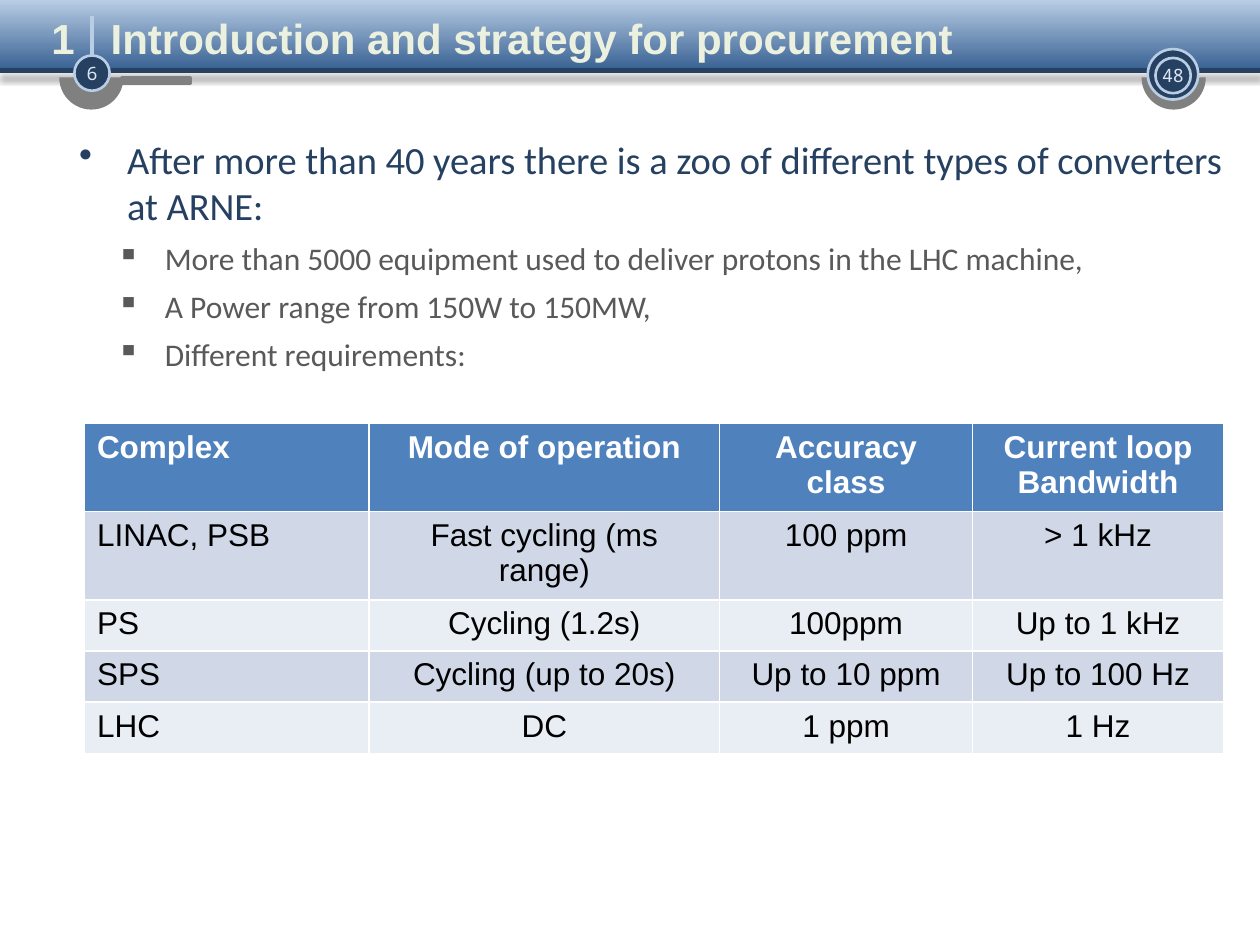
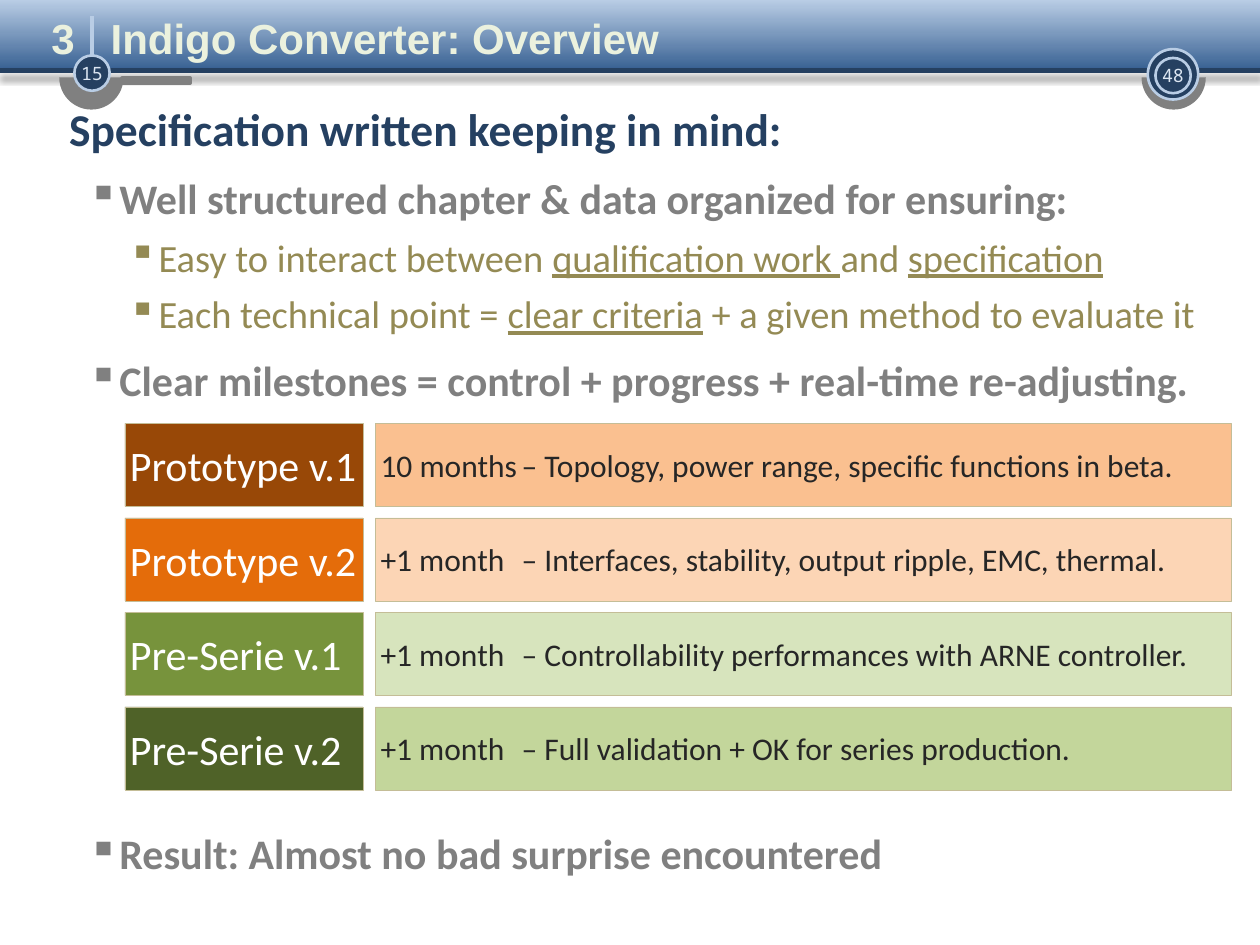
from lxml.etree import SubElement
from pptx import Presentation
from pptx.dml.color import RGBColor
from pptx.enum.shapes import MSO_CONNECTOR, MSO_SHAPE
from pptx.enum.text import MSO_ANCHOR, PP_ALIGN
from pptx.oxml.ns import qn
from pptx.util import Inches, Pt

COLOURS = {
    "navy": "254061", "band": "376092", "sky": "B9CDE5", "ice": "DCE6F2",
    "cream": "EBF1DE", "grey": "808080", "dark grey": "595959",
    "olive": "948A54", "ink": "262626", "white": "FFFFFF", "black": "000000",
    "header": "4F81BD", "odd row": "D0D8E8", "even row": "E9EDF4",
    "edge": "C4BD97", "brown": "984807", "peach": "FAC090",
    "orange": "E46C0A", "light peach": "FCD5B5", "green": "77933C",
    "light green": "D7E4BD", "forest": "4F6228", "mid green": "C3D69B",
}
RGB = {name: RGBColor.from_string(value) for name, value in COLOURS.items()}

deck = Presentation()
deck.slide_width, deck.slide_height = Inches(10), Inches(7.5)
CELL = deck.slide_width // 100  # grid of 100 columns by 75 rows


def block(slide, kind, area, fill=None, line=None, weight=1.0, pad=0.0):
    """Place a preset shape, or a text box when kind is None, on the grid."""
    area = [int(cells * CELL) for cells in area]
    if kind is None:
        shape = slide.shapes.add_textbox(*area)
    else:
        shape = slide.shapes.add_shape(kind, *area)
        shape.shadow.inherit = False
        shape.fill.solid()
        shape.fill.fore_color.rgb = RGB[fill]
        if line:
            shape.line.color.rgb = RGB[line]
            shape.line.width = Pt(weight)
        else:
            shape.line.fill.background()
        frame = shape.text_frame
        frame.margin_left = frame.margin_right = int(pad * CELL)
        frame.vertical_anchor = MSO_ANCHOR.MIDDLE
    shape.text_frame.word_wrap = True
    return shape


def write(paragraph, text, size, colour, font="Calibri", bold=False,
          align=PP_ALIGN.LEFT, before=0, left=0.0, hang=0.0, bullet=None):
    """Fill a paragraph; parts between bars are underlined."""
    properties = paragraph._p.get_or_add_pPr()
    if left:
        properties.set("marL", str(int(left * CELL)))
        properties.set("indent", str(int(-hang * CELL)))
    if bullet:
        SubElement(properties, qn("a:buChar")).set("char", bullet)
    paragraph.alignment = align
    paragraph.space_before = Pt(before)
    paragraph.font.size, paragraph.font.bold = Pt(size), bold
    paragraph.font.name = font
    paragraph.font.color.rgb = RGB[colour]
    for number, part in enumerate(text.split("|")):
        run = paragraph.add_run()
        run.text = part
        if number % 2:
            run.font.underline = True


# Shared header: band, rules, page badges and title
pages = []
for chapter, title, page in [
    ("1", "Introduction and strategy for procurement", "6"),
    ("3", "Indigo Converter: Overview", "15"),
]:
    slide = deck.slides.add_slide(deck.slide_layouts[6])
    pages.append(slide)

    band = block(slide, MSO_SHAPE.RECTANGLE, (0, 0, 100, 5.6), "band")
    band.fill.gradient()
    band.fill.gradient_angle = 270
    for stop, colour in zip(band.fill.gradient_stops, ("sky", "band")):
        stop.color.rgb = RGB[colour]

    for ends, colour, weight, shadowed in [
        ((0, 5.6, 100, 5.6), "navy", 3, True),
        ((7.3, 1.3, 7.3, 4.4), "sky", 2.25, False),
    ]:
        rule = slide.shapes.add_connector(
            MSO_CONNECTOR.STRAIGHT, *[int(cells * CELL) for cells in ends])
        rule.line.color.rgb = RGB[colour]
        rule.line.width = Pt(weight)
        effects = SubElement(rule._element.spPr, qn("a:effectLst"))
        if shadowed:
            shadow = SubElement(effects, qn("a:outerShdw"), blurRad=str(Pt(4)),
                                dist=str(Pt(3)), dir="5400000", rotWithShape="0")
            black = SubElement(shadow, qn("a:srgbClr"), val=COLOURS["black"])
            SubElement(black, qn("a:alpha"), val="40000")

    for left in (90.6, 4.7):
        cup = block(slide, MSO_SHAPE.PIE, (left, 3.6, 5.1, 5.1), "grey")
        cup.adjustments[0], cup.adjustments[1] = 0, 108
    block(slide, MSO_SHAPE.OVAL, (91.1, 3.9, 4, 4), "navy", "sky", 1.5)
    for left, top, number in [(5.9, 4.4, page), (91.7, 4.6, "48")]:
        badge = block(slide, MSO_SHAPE.OVAL, (left, top, 2.8, 2.8), "navy", "sky", 1.5)
        badge.text_frame.word_wrap = False
        write(badge.text_frame.paragraphs[0], number, 10.5, "ice",
              "Noto Sans Mono", align=PP_ALIGN.CENTER)

    heading = block(slide, None, (3.1, 0.5, 94.1, 5))
    write(heading.text_frame.paragraphs[0], f"{chapter}\t{title}", 24, "cream",
          "Arial", bold=True, left=4.7, hang=4.7)
    block(slide, MSO_SHAPE.RECTANGLE, (9.7, 6.2, 5.4, 0.4), "grey", "grey", 2)

procurement, overview = pages

# Procurement: bullets
main_point = dict(size=22, colour="navy", before=4.4, left=3.8, hang=3.8, bullet="•")
sub_point = dict(size=18, colour="dark grey", before=6, left=6.8, hang=3.8, bullet="▪")
frame = block(procurement, None, (5.3, 10.3, 93.2, 63.4)).text_frame
for number, (text, style) in enumerate([
    ("After more than 40 years there is a zoo of different types of converters "
     "at ARNE:", main_point),
    ("More than 5000 equipment used to deliver protons in the LHC machine,", sub_point),
    ("A Power range from 150W to 150MW,", sub_point),
    ("Different requirements:", sub_point),
]):
    write(frame.add_paragraph() if number else frame.paragraphs[0], text, **style)

# Procurement: requirements per complex
requirements = [
    ("Complex", "Mode of operation", "Accuracy class", "Current loop Bandwidth"),
    ("LINAC, PSB", "Fast cycling (ms range)", "100 ppm", "> 1 kHz"),
    ("PS", "Cycling (1.2s)", "100ppm", "Up to 1 kHz"),
    ("SPS", "Cycling (up to 20s)", "Up to 10 ppm", "Up to 100 Hz"),
    ("LHC", "DC", "1 ppm", "1 Hz"),
]
widths = (22.6, 27.8, 20.1, 19.9)
row_height = 4.06
area = (6.7, 33.6, sum(widths), row_height * len(requirements))
table = procurement.shapes.add_table(
    len(requirements), len(widths), *[int(cells * CELL) for cells in area]).table
for column, width in zip(table.columns, widths):
    column.width = int(width * CELL)
for r, row in enumerate(requirements):
    fill = "header" if r == 0 else "odd row" if r % 2 else "even row"
    for c, text in enumerate(row):
        cell = table.cell(r, c)
        cell.fill.solid()
        cell.fill.fore_color.rgb = RGB[fill]
        write(cell.text_frame.paragraphs[0], text, 18,
              "black" if r else "white", "Arial", bold=r == 0,
              align=PP_ALIGN.CENTER if c else PP_ALIGN.LEFT)

# Overview: specification points; the result sits below the milestones
lead = dict(size=26, colour="navy", bold=True, before=14)
point = dict(size=24, colour="grey", bold=True, before=10, left=3.9, hang=2.4,
             bullet="▪", align=PP_ALIGN.JUSTIFY)
detail = dict(point, size=22, colour="olive", bold=False, before=6, left=7.1)
result = dict(point, before=242)
frame = block(overview, None, (4.5, 7.5, 94.5, 61.5)).text_frame
for number, (text, style) in enumerate([
    ("Specification written keeping in mind:", lead),
    ("Well structured chapter & data organized for ensuring:", point),
    ("Easy to interact between |qualification work |and |specification|", detail),
    ("Each technical point = |clear criteria| + a given method to evaluate it", detail),
    ("Clear milestones = control + progress + real-time re-adjusting.", point),
    ("Result: Almost no bad surprise encountered", result),
]):
    write(frame.add_paragraph() if number else frame.paragraphs[0], text, **style)

# Overview: milestones
for row, (stage, stage_fill, duration, scope, scope_fill) in enumerate([
    ("Prototype v.1", "brown", "10 months",
     "Topology, power range, specific functions in beta.", "peach"),
    ("Prototype v.2", "orange", "+1 month",
     "Interfaces, stability, output ripple, EMC, thermal.", "light peach"),
    ("Pre-Serie v.1", "green", "+1 month",
     "Controllability performances with ARNE controller.", "light green"),
    ("Pre-Serie v.2", "forest", "+1 month",
     "Full validation + OK for series production.", "mid green"),
]):
    top = 33.6 + 7.5 * row
    label = block(overview, MSO_SHAPE.RECTANGLE, (9.9, top, 18.9, 6.6),
                  stage_fill, "edge", 0.25, pad=0.4)
    write(label.text_frame.paragraphs[0], stage, 24, "white")
    content = block(overview, MSO_SHAPE.RECTANGLE, (29.8, top, 67.9, 6.6),
                    scope_fill, "edge", 0.25, pad=0.4)
    write(content.text_frame.paragraphs[0], f"{duration}\t– {scope}", 18, "ink",
          left=11.2, hang=11.2)

deck.save("out.pptx")
